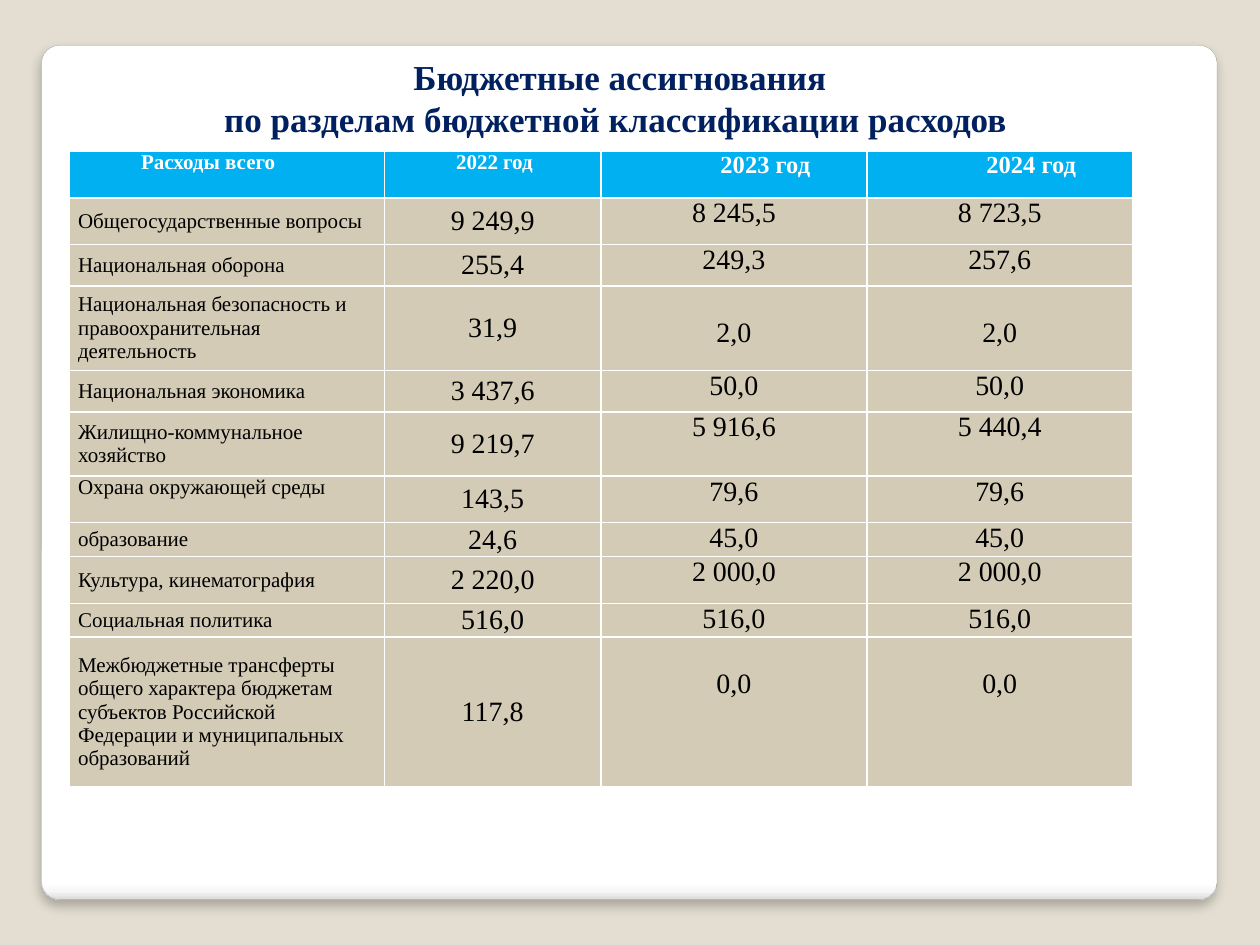
import pptx
import pptx.dml.color
import pptx.enum.shapes
import pptx.enum.text
import pptx.oxml
import pptx.oxml.ns
import pptx.util

Inches = pptx.util.Inches
RGBColor = pptx.dml.color.RGBColor
PP_ALIGN = pptx.enum.text.PP_ALIGN
MSO_ANCHOR = pptx.enum.text.MSO_ANCHOR

WHITE = RGBColor(0xFF, 0xFF, 0xFF)
BLACK = RGBColor(0x00, 0x00, 0x00)
NAVY = RGBColor(0x00, 0x20, 0x60)
SKY = RGBColor(0x00, 0xB0, 0xF0)
SAND = RGBColor(0xD3, 0xCB, 0xB6)
BEIGE = RGBColor(0xE3, 0xDE, 0xD1)
GRAY = RGBColor(0xA4, 0xA4, 0xA4)
PALE = RGBColor(0xF7, 0xF7, 0xF7)
SILVER = RGBColor(0xDA, 0xDA, 0xDA)

CARD_STOPS = [(0, WHITE), (98, WHITE), (99, PALE), (100, SILVER)]
COLUMN_WIDTHS = [2.5, 1.72, 2.11, 2.11]
HEADER_HEIGHT = 0.37
HEADINGS = [
    ("Расходы всего", 12, PP_ALIGN.LEFT),
    ("2022 год", 12, PP_ALIGN.LEFT),
    ("2023 год", 14, PP_ALIGN.CENTER),
    ("2024 год", 14, PP_ALIGN.CENTER),
]
EXPENSES = [
    (0.37, "Общегосударственные вопросы", "9 249,9", "8 245,5", "8 723,5"),
    (0.33, "Национальная оборона", "255,4", "249,3", "257,6"),
    (0.67, "Национальная безопасность и правоохранительная деятельность", "31,9", "2,0", "2,0"),
    (0.33, "Национальная экономика", "3 437,6", "50,0", "50,0"),
    (0.51, "Жилищно-коммунальное хозяйство", "9 219,7", "5 916,6", "5 440,4"),
    (0.37, "Охрана окружающей среды", "143,5", "79,6", "79,6"),
    (0.27, "образование", "24,6", "45,0", "45,0"),
    (0.37, "Культура, кинематография", "2 220,0", "2 000,0", "2 000,0"),
    (0.27, "Социальная политика", "516,0", "516,0", "516,0"),
    (1.19, "Межбюджетные трансферты общего характера бюджетам субъектов "
           "Российской Федерации и муниципальных образований", "117,8", "0,0", "0,0"),
]
TOP_LABEL = "Охрана окружающей среды"
LOWERED_ROW_HEIGHT = 0.6


class BudgetSlide:
    font = "Times New Roman"

    def __init__(self, deck):
        self.slide = deck.slides.add_slide(deck.slide_layouts[5])
        background = self.slide.background.fill
        background.solid()
        background.fore_color.rgb = BEIGE

    def set_text(self, frame, text, size, color, bold=False, align=PP_ALIGN.LEFT):
        frame.text = text
        for paragraph in frame.paragraphs:
            paragraph.alignment = align
            for run in paragraph.runs:
                run.font.name = self.font
                run.font.size = pptx.util.Pt(size)
                run.font.bold = bold
                run.font.color.rgb = color

    def card(self, left, top, width, height):
        card = self.slide.shapes.add_shape(
            pptx.enum.shapes.MSO_SHAPE.ROUNDED_RECTANGLE,
            Inches(left), Inches(top), Inches(width), Inches(height))
        card.adjustments[0] = 0.021
        card.line.color.rgb = GRAY
        card.line.width = pptx.util.Pt(0.16)
        namespace = pptx.oxml.ns.nsdecls("a")
        stops = "".join(
            f'<a:gs pos="{position * 1000}"><a:srgbClr val="{color}"/></a:gs>'
            for position, color in CARD_STOPS)
        gradient = pptx.oxml.parse_xml(
            f'<a:gradFill {namespace} rotWithShape="1"><a:gsLst>{stops}</a:gsLst>'
            '<a:lin ang="5400000" scaled="0"/></a:gradFill>')
        shadow = pptx.oxml.parse_xml(
            f'<a:effectLst {namespace}><a:outerShdw blurRad="{pptx.util.Pt(6)}" '
            f'dist="{pptx.util.Pt(4)}" dir="5400000" algn="t" rotWithShape="0">'
            '<a:srgbClr val="000000"><a:alpha val="25000"/></a:srgbClr>'
            '</a:outerShdw></a:effectLst>')
        properties = card._element.spPr
        properties.insert(2, gradient)
        properties.append(shadow)
        self.slide.shapes._spTree.insert(2, card._element)

    def title(self, text, left, top, width, height):
        title = self.slide.shapes.title
        title.left, title.top = Inches(left), Inches(top)
        title.width, title.height = Inches(width), Inches(height)
        frame = title.text_frame
        self.set_text(frame, text, 20, NAVY, True, PP_ALIGN.CENTER)
        frame.word_wrap = True
        frame.auto_size = pptx.enum.text.MSO_AUTO_SIZE.SHAPE_TO_FIT_TEXT
        frame.vertical_anchor = MSO_ANCHOR.MIDDLE

    def cell(self, cell, text, size, fill, color, bold, align, anchor):
        cell.fill.solid()
        cell.fill.fore_color.rgb = fill
        cell.margin_left = cell.margin_right = Inches(0.07)
        cell.margin_top = cell.margin_bottom = 0
        cell.vertical_anchor = anchor
        self.set_text(cell.text_frame, text, size, color, bold, align)

    def table(self, left, top):
        heights = [HEADER_HEIGHT] + [expense[0] for expense in EXPENSES]
        table = self.slide.shapes.add_table(
            len(heights), len(COLUMN_WIDTHS), Inches(left), Inches(top),
            Inches(sum(COLUMN_WIDTHS)), Inches(sum(heights))).table
        table.horz_banding = False
        for column, width in zip(table.columns, COLUMN_WIDTHS):
            column.width = Inches(width)
        for row, height in zip(table.rows, heights):
            row.height = Inches(height)
        for index, (heading, size, align) in enumerate(HEADINGS):
            cell = table.cell(0, index)
            self.cell(cell, heading, size, SKY, WHITE, True, align, MSO_ANCHOR.TOP)
            cell.text_frame.paragraphs[0]._p.get_or_add_pPr().set("indent", str(Inches(0.5)))
        for row, (height, section, *amounts) in enumerate(EXPENSES, 1):
            anchor = MSO_ANCHOR.TOP if section == TOP_LABEL else MSO_ANCHOR.MIDDLE
            self.cell(table.cell(row, 0), section, 12, SAND, BLACK, False,
                      PP_ALIGN.LEFT, anchor)
            for column, amount in enumerate(amounts, 1):
                cell = table.cell(row, column)
                anchor = MSO_ANCHOR.MIDDLE if column == 1 else MSO_ANCHOR.TOP
                self.cell(cell, amount, 16, SAND, BLACK, False, PP_ALIGN.CENTER, anchor)
                if column > 1 and height > LOWERED_ROW_HEIGHT:
                    cell.margin_top = Inches(0.25)


def main():
    deck = pptx.Presentation()
    deck.slide_width, deck.slide_height = Inches(10), Inches(7.5)
    budget = BudgetSlide(deck)
    budget.card(0.33, 0.36, 9.33, 6.78)
    budget.title("Бюджетные ассигнования\vпо разделам бюджетной классификации расходов ",
                 0.78, 0.39, 8.28, 0.77)
    budget.table(0.55, 1.2)
    deck.save("out.pptx")


if __name__ == "__main__":
    main()
